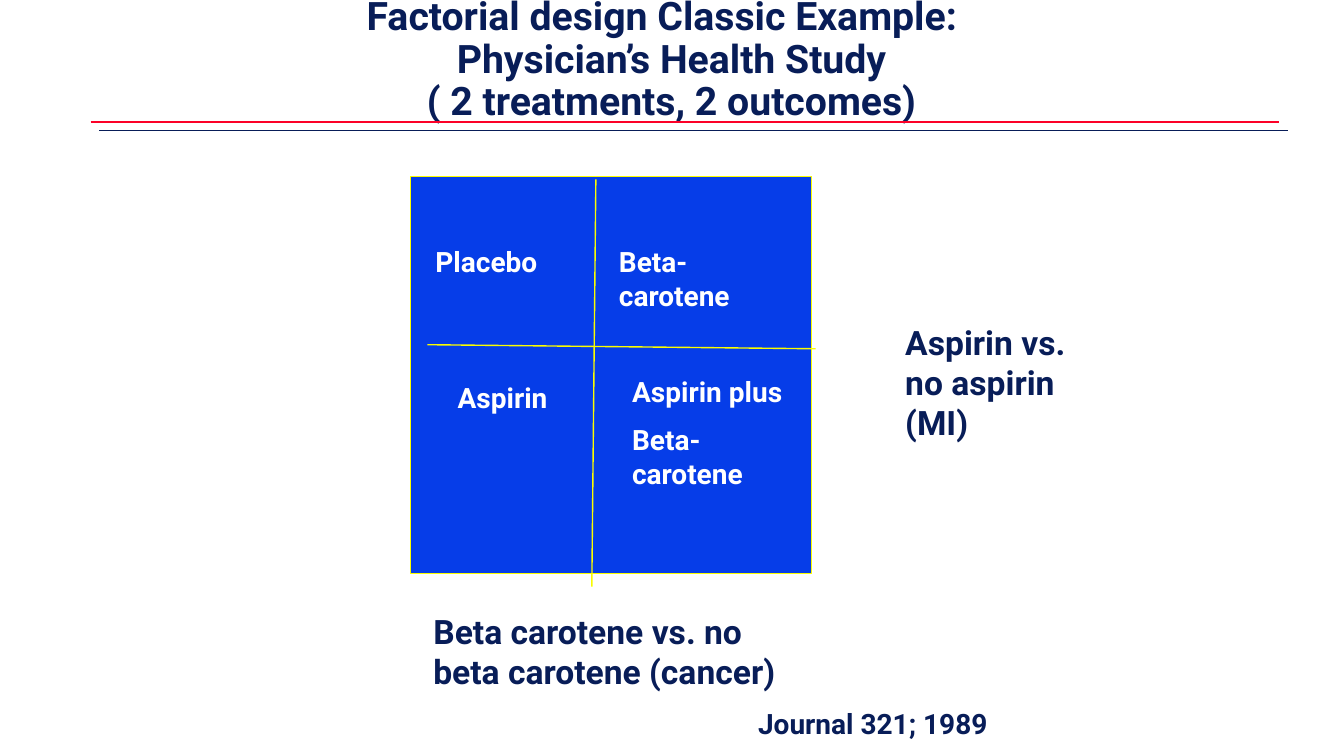
from dataclasses import dataclass

from lxml import etree
from pptx import Presentation
from pptx.dml.color import RGBColor
from pptx.enum.shapes import MSO_CONNECTOR, MSO_SHAPE
from pptx.enum.text import MSO_ANCHOR, MSO_AUTO_SIZE, PP_ALIGN
from pptx.oxml.ns import qn
from pptx.util import Inches, Pt

STRAIGHT = MSO_CONNECTOR.STRAIGHT
RECTANGLE = MSO_SHAPE.RECTANGLE
MIDDLE = MSO_ANCHOR.MIDDLE
TOP = MSO_ANCHOR.TOP
CENTER = PP_ALIGN.CENTER
NO_AUTOFIT = MSO_AUTO_SIZE.NONE
TITLE_ONLY = 5


@dataclass(frozen=True)
class Theme:
    font: str = "Roboto"
    navy: str = "081D58"
    red: str = "FC0128"
    blue: str = "063DE8"
    yellow: str = "FAFD00"
    white: str = "FFFFFF"
    title_size: int = 28
    outcome_size: int = 24
    label_size: int = 20
    paragraph_gap: int = 10
    line_width: int = 1


THEME = Theme()


def style_span(span, size, color):
    span.font.name = THEME.font
    span.font.size = Pt(size)
    span.font.bold = True
    span.font.color.rgb = RGBColor.from_string(color)


def add_label(page, box, lines, size, color):
    left, top, width, height = box
    label = page.shapes.add_textbox(
        Inches(left), Inches(top), Inches(width), Inches(height))
    frame = label.text_frame
    frame.word_wrap = True
    frame.vertical_anchor = TOP
    for index, line in enumerate(lines):
        para = frame.paragraphs[0] if index == 0 else frame.add_paragraph()
        para.space_before = Pt(THEME.paragraph_gap if index else 0)
        span = para.add_run()
        span.text = line
        style_span(span, size, color)


def add_line(page, start, end, color):
    line = page.shapes.add_connector(
        STRAIGHT, *(Inches(value) for value in (*start, *end)))
    line.line.color.rgb = RGBColor.from_string(color)
    line.line.width = Pt(THEME.line_width)
    effects = etree.SubElement(line._element.spPr, qn("a:effectLst"))
    return effects


def add_title(page, box, lines):
    left, top, width, height = box
    title = page.shapes.title
    title.left, title.top = Inches(left), Inches(top)
    title.width, title.height = Inches(width), Inches(height)
    frame = title.text_frame
    frame.word_wrap = True
    frame.auto_size = NO_AUTOFIT
    frame.vertical_anchor = MIDDLE
    para = frame.paragraphs[0]
    para.alignment = CENTER
    para.line_spacing = 0.9
    for index, line in enumerate(lines):
        if index:
            para.add_line_break()
        span = para.add_run()
        span.text = line
        style_span(span, THEME.title_size, THEME.navy)

    # Red rule with a navy shadow under the title
    rule_y = top + height + 0.01
    effects = add_line(page, (left + 0.9, rule_y), (left + 12.69, rule_y), THEME.red)
    shadow = etree.SubElement(
        effects, qn("a:outerShdw"), dist=str(Pt(8.5)), dir=str(45 * 60000),
        algn="ctr", rotWithShape="0")
    etree.SubElement(shadow, qn("a:srgbClr"), val=THEME.navy)


def add_factorial_square(page, box):
    left, top, width, height = box
    square = page.shapes.add_shape(
        RECTANGLE, Inches(left), Inches(top), Inches(width), Inches(height))
    square.shadow.inherit = False
    square.fill.solid()
    square.fill.fore_color.rgb = RGBColor.from_string(THEME.blue)
    square.line.color.rgb = RGBColor.from_string(THEME.yellow)
    square.line.width = Pt(THEME.line_width)

    # Slightly slanted dividers
    add_line(page, (left + 1.84, top + 0.03), (left + 1.8, top + 4.07), THEME.yellow)
    add_line(page, (left + 0.17, top + 1.67), (left + 4.02, top + 1.71), THEME.yellow)

    # Treatment arms, offset from the square's corner
    arms = [
        ((0.15, 0.63, 1.48, 0.43), ["Placebo"]),
        ((0.37, 1.98, 1.26, 0.43), ["Aspirin"]),
        ((1.97, 0.63, 1.61, 0.77), ["Beta-carotene"]),
        ((2.1, 1.92, 1.81, 1.6), ["Aspirin plus", "Beta-carotene"]),
    ]
    for (across, down, arm_width, arm_height), lines in arms:
        add_label(page, (left + across, top + down, arm_width, arm_height),
                  lines, THEME.label_size, THEME.white)


def add_outcome(page, box, text):
    add_label(page, box, [text], THEME.outcome_size, THEME.navy)


def add_citation(page, box, text):
    add_label(page, box, [text], THEME.label_size, THEME.navy)


def main():
    deck = Presentation()
    deck.slide_width, deck.slide_height = Inches(13.33), Inches(7.5)
    page = deck.slides.add_slide(deck.slide_layouts[TITLE_ONLY])

    add_title(page, (0, 0, 13.32, 1.2), [
        "Factorial design Classic Example:  ",
        "Physician’s Health Study",
        "( 2 treatments, 2 outcomes)",
    ])
    add_factorial_square(page, (4.07, 1.75, 3.98, 3.94))
    add_outcome(page, (8.88, 3.14, 1.81, 1.72), "Aspirin vs. no aspirin (MI)")
    add_outcome(page, (4.2, 6.01, 3.7, 1.31),
                "Beta carotene vs. no beta carotene (cancer)")
    add_citation(page, (7.42, 6.96, 3.74, 0.43), "Journal 321; 1989")

    deck.save("out.pptx")


if __name__ == "__main__":
    main()
